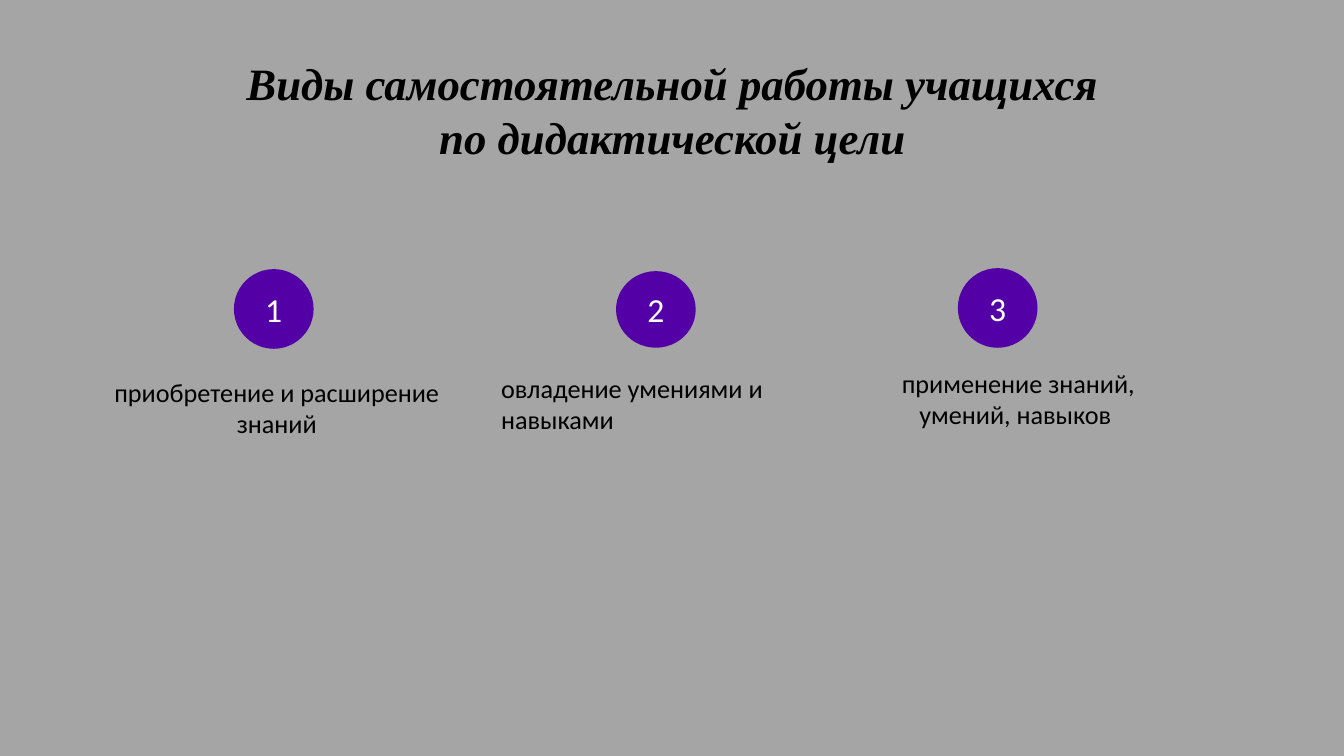
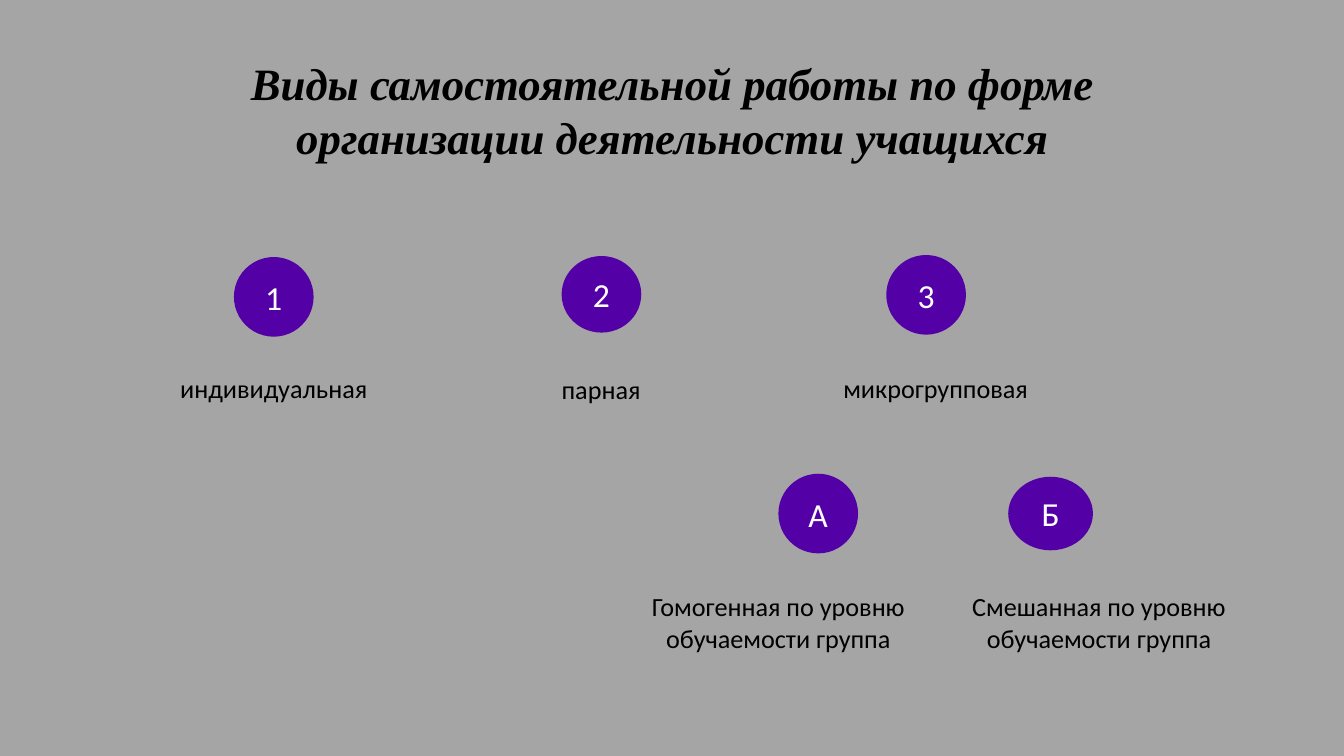
from dataclasses import dataclass

from pptx import Presentation
from pptx.dml.color import RGBColor as Rgb
from pptx.enum.shapes import MSO_SHAPE as Kind
from pptx.enum.text import MSO_ANCHOR as Anchor, MSO_AUTO_SIZE as Fit, PP_ALIGN as Align
from pptx.slide import Slide
from pptx.text.text import TextFrame
from pptx.util import Inches, Pt

Box = tuple[float, float, float, float]


@dataclass(frozen=True)
class Theme:
    back: Rgb = Rgb(0xA5, 0xA5, 0xA5)
    disc: Rgb = Rgb(0x53, 0x00, 0xA6)
    dark: Rgb = Rgb(0, 0, 0)
    light: Rgb = Rgb(255, 255, 255)
    serif: str = "Times New Roman"
    sans: str = "Calibri"
    head: float = 32
    mark: float = 24
    body: float = 18.7


@dataclass(frozen=True)
class Item:
    """A numbered disc with the label below it."""
    mark: str
    disc: Box
    text: str
    label: Box
    align: Align = Align.CENTER


@dataclass(frozen=True)
class Page:
    title: str
    items: tuple[Item, ...]


THEME = Theme()
HEAD: Box = (2.39, 0.55, 8.56, 1.08)
DISC, LOW = 0.79, 0.76  # disc width, height of the flatter disc
LINE, PAIR = 0.31, 0.63  # label height for one and two lines
LEFT, MID, RIGHT = 3.25, 2.88, 3.12  # label widths by column

PAGES = (
    Page("Виды самостоятельной работы учащихся по дидактической цели", (
        Item("1", (2.32, 2.67, DISC, DISC),
             "приобретение и расширение знаний", (1.12, 3.73, LEFT, PAIR)),
        Item("2", (6.11, 2.69, DISC, LOW),
             "овладение умениями и навыками", (4.97, 3.69, MID, PAIR), Align.LEFT),
        Item("3", (9.5, 2.66, DISC, DISC),
             "применение знаний, умений, навыков ", (8.54, 3.64, RIGHT, PAIR)),
    )),
    Page("Виды самостоятельной работы по форме организации деятельности учащихся", (
        Item("1", (2.32, 2.55, DISC, DISC),
             "индивидуальная", (1.09, 3.69, LEFT, LINE)),
        Item("2", (5.57, 2.54, DISC, LOW),
             "парная", (5.57, 3.7, MID, LINE), Align.LEFT),
        Item("3", (8.79, 2.53, DISC, DISC),
             "микрогрупповая", (7.72, 3.69, RIGHT, LINE)),
        Item("А", (7.72, 4.7, DISC, DISC),
             "Гомогенная по уровню обучаемости группа", (6.16, 5.86, RIGHT, PAIR)),
        Item("Б", (10, 4.73, 0.84, 0.73),
             "Смешанная по уровню обучаемости группа", (9.34, 5.86, RIGHT, PAIR)),
    )),
)


def write(frame: TextFrame, text: str, *, size: float = THEME.body,
          font: str = THEME.sans, color: Rgb = THEME.dark, bold: bool = False,
          slant: bool = False, align: Align = Align.CENTER,
          anchor: Anchor = Anchor.TOP, inset: float = 0) -> None:
    """Fill a text frame with one formatted paragraph."""
    frame.auto_size = Fit.NONE
    frame.word_wrap = True
    frame.vertical_anchor = anchor
    frame.margin_left = frame.margin_right = Inches(inset)
    frame.margin_top = frame.margin_bottom = Inches(inset)
    para = frame.paragraphs[0]
    para.alignment = align
    run = para.add_run()
    run.text = text
    face = run.font
    face.name, face.size = font, Pt(size)
    face.bold, face.italic = bold, slant
    face.color.rgb = color


def draw_title(slide: Slide, text: str) -> None:
    title = slide.shapes.title
    title.left, title.top, title.width, title.height = map(Inches, HEAD)
    write(title.text_frame, text, size=THEME.head, font=THEME.serif,
          bold=True, slant=True)


def draw_item(slide: Slide, item: Item) -> None:
    disc = slide.shapes.add_shape(Kind.OVAL, *map(Inches, item.disc))
    disc.shadow.inherit = False
    disc.fill.solid()
    disc.fill.fore_color.rgb = THEME.disc
    disc.line.fill.background()
    write(disc.text_frame, item.mark, size=THEME.mark, color=THEME.light,
          anchor=Anchor.MIDDLE, inset=0.05)
    label = slide.shapes.add_textbox(*map(Inches, item.label))
    write(label.text_frame, item.text, align=item.align)


def main() -> None:
    deck = Presentation()
    deck.slide_width, deck.slide_height = Inches(13.33), Inches(7.5)

    # Shared background
    fill = deck.slide_master.background.fill
    fill.solid()
    fill.fore_color.rgb = THEME.back

    # Slides
    plain = deck.slide_layouts.get_by_name("Title Only")
    for page in PAGES:
        slide = deck.slides.add_slide(plain)
        draw_title(slide, page.title)
        for item in page.items:
            draw_item(slide, item)
    deck.save("out.pptx")


if __name__ == "__main__":
    main()
